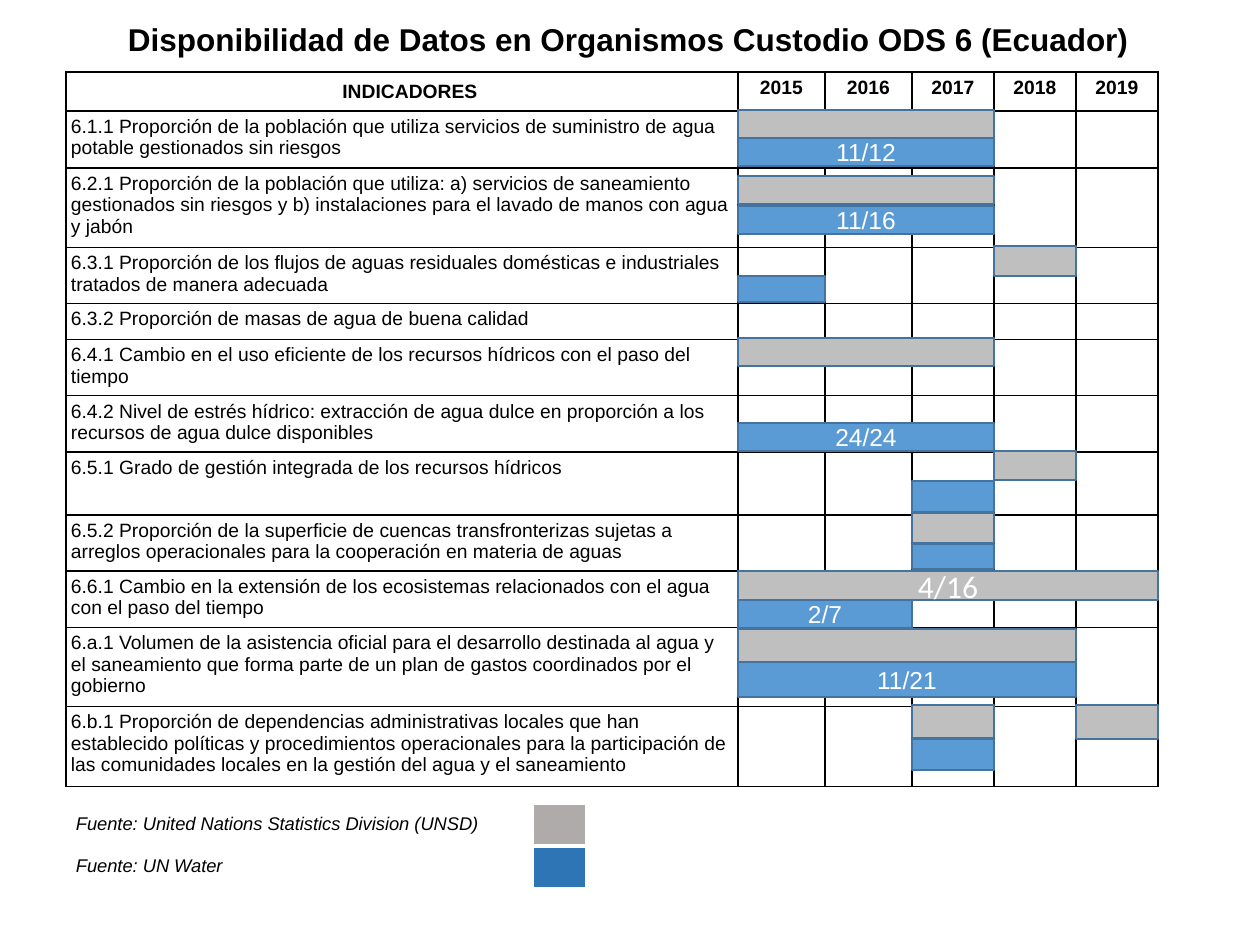
from itertools import accumulate
from lxml.etree import SubElement
from pptx import Presentation
from pptx.dml.color import RGBColor
from pptx.enum.shapes import MSO_SHAPE
from pptx.enum.text import MSO_ANCHOR, PP_ALIGN
from pptx.oxml.ns import qn
from pptx.util import Emu, Pt

BLACK = RGBColor(0x00, 0x00, 0x00)
WHITE = RGBColor(0xFF, 0xFF, 0xFF)
GRAY = RGBColor(0xBF, 0xBF, 0xBF)
BLUE = RGBColor(0x5B, 0x9B, 0xD5)
EDGE = RGBColor(0x43, 0x73, 0x9E)
KEY_GRAY = RGBColor(0xAF, 0xAB, 0xAB)
KEY_BLUE = RGBColor(0x2E, 0x75, 0xB6)

TITLE = "Disponibilidad de Datos en Organismos Custodio ODS 6 (Ecuador)"
HEADS = ["INDICADORES", "2015", "2016", "2017", "2018", "2019"]
COLS = [672, 87, 87, 82, 82, 82]
HEAD_H = 39

# Indicator, row height
GOALS = [
    ("6.1.1 Proporción de la población que utiliza servicios de suministro de agua "
     "potable gestionados sin riesgos", 57),
    ("6.2.1 Proporción de la población que utiliza: a) servicios de saneamiento "
     "gestionados sin riesgos y b) instalaciones para el lavado de manos con agua "
     "y jabón", 79),
    ("6.3.1 Proporción de los flujos de aguas residuales domésticas e industriales "
     "tratados de manera adecuada", 56),
    ("6.3.2 Proporción de masas de agua de buena calidad", 36),
    ("6.4.1 Cambio en el uso eficiente de los recursos hídricos con el paso del "
     "tiempo", 56),
    ("6.4.2 Nivel de estrés hídrico: extracción de agua dulce en proporción a los "
     "recursos de agua dulce disponibles", 56),
    ("6.5.1 Grado de gestión integrada de los recursos hídricos", 63),
    ("6.5.2 Proporción de la superficie de cuencas transfronterizas sujetas a "
     "arreglos operacionales para la cooperación en materia de aguas", 56),
    ("6.6.1 Cambio en la extensión de los ecosistemas relacionados con el agua "
     "con el paso del tiempo", 56),
    ("6.a.1 Volumen de la asistencia oficial para el desarrollo destinada al agua y "
     "el saneamiento que forma parte de un plan de gastos coordinados por el "
     "gobierno", 79),
    ("6.b.1 Proporción de dependencias administrativas locales que han "
     "establecido políticas y procedimientos operacionales para la participación de "
     "las comunidades locales en la gestión del agua y el saneamiento", 80),
]

# Row, drop from row top, height, first year, last year, fill, label
BARS = [
    (1, -1, 28, 2015, 2017, GRAY, ""),
    (1, 27, 28, 2015, 2017, BLUE, "11/12"),
    (2, 8, 28, 2015, 2017, GRAY, ""),
    (2, 38, 28, 2015, 2017, BLUE, "11/16"),
    (3, -1, 30, 2018, 2018, GRAY, ""),
    (3, 29, 26, 2015, 2015, BLUE, ""),
    (5, -1, 28, 2015, 2017, GRAY, ""),
    (6, 28, 28, 2015, 2017, BLUE, "24/24"),
    (7, 0, 29, 2018, 2018, GRAY, ""),
    (7, 30, 31, 2017, 2017, BLUE, ""),
    (8, -1, 30, 2017, 2017, GRAY, ""),
    (8, 30, 25, 2017, 2017, BLUE, ""),
    (9, 1, 29, 2015, 2019, GRAY, "4/16"),
    (9, 30, 28, 2015, 2016, BLUE, "2/7"),
    (10, 3, 33, 2015, 2018, GRAY, ""),
    (10, 36, 35, 2015, 2018, BLUE, "11/21"),
    (11, 0, 33, 2017, 2017, GRAY, ""),
    (11, 0, 34, 2019, 2019, GRAY, ""),
    (11, 34, 31, 2017, 2017, BLUE, ""),
]
KEYS = [
    ("Fuente: United Nations Statistics Division (UNSD)", KEY_GRAY, 3),
    ("Fuente: UN Water", KEY_BLUE, 1),
]


def px(n):
    return Emu(round(n * 914400 / 126))


def write(frame, text, size, color, align=PP_ALIGN.LEFT, name="Arial", **look):
    para = frame.paragraphs[0]
    para.alignment = align
    run = para.add_run()
    run.text = text
    run.font.color.rgb = color
    for key, val in {"size": Pt(size), "name": name, **look}.items():
        setattr(run.font, key, val)
    return para


def border(cell, color, width, base=None):
    """Line all four sides; base is the width of the bottom one."""
    props = cell._tc.get_or_add_tcPr()
    for spot, side in enumerate(("lnL", "lnR", "lnT", "lnB")):
        wide = base if base and side == "lnB" else width
        line = props.makeelement(qn("a:" + side), {"w": str(Pt(wide))})
        fill = SubElement(line, qn("a:solidFill"))
        SubElement(fill, qn("a:srgbClr"), val=str(color))
        props.insert(spot, line)


def grid(slide, left, top, cols, rows, inset):
    """Add a bare table with the given column widths and row heights."""
    frame = slide.shapes.add_table(len(rows), len(cols), px(left), px(top),
                                   px(sum(cols)), px(sum(rows)))
    table = frame.table
    table.first_row = table.horz_banding = False
    for col, wide in zip(table.columns, cols):
        col.width = px(wide)
    for row, high in zip(table.rows, rows):
        row.height = px(high)
    for cell in table.iter_cells():
        cell.fill.background()
        for side in ("left", "right", "top", "bottom"):
            setattr(cell, "margin_" + side, px(inset))
        end = cell.text_frame.paragraphs[0]._p.get_or_add_endParaRPr()
        end.set("sz", "1050")
    return table


def title(slide, left, top, wide, high):
    frame = slide.shapes.add_textbox(px(left), px(top), px(wide), px(high)).text_frame
    frame.word_wrap = True
    write(frame, TITLE, 18, BLACK, PP_ALIGN.CENTER, bold=True)


def goals(slide, left, top):
    rows = [HEAD_H] + [high for _, high in GOALS]
    table = grid(slide, left, top, COLS, rows, 5)
    for cell in table.iter_cells():
        border(cell, BLACK, 1)
    paras = [write(table.cell(0, c).text_frame, head, 11, BLACK,
                   PP_ALIGN.CENTER, bold=True) for c, head in enumerate(HEADS)]
    table.cell(0, 0).vertical_anchor = MSO_ANCHOR.MIDDLE
    paras[0]._p.get_or_add_pPr().set("indent", str(px(16)))
    paras += [write(table.cell(r, 0).text_frame, text, 11, BLACK, bold=False)
              for r, (text, _) in enumerate(GOALS, 1)]
    for para in paras:
        para.space_before = para.space_after = Pt(6)
    bars(slide, left, top, rows)


def bars(slide, left, top, rows):
    group = slide.shapes.add_group_shape()
    edges = list(accumulate(COLS, initial=left))
    tops = list(accumulate(rows, initial=top))
    for row, drop, high, start, stop, color, text in BARS:
        x, end = edges[start - 2014], edges[stop - 2013]
        bar = group.shapes.add_shape(MSO_SHAPE.RECTANGLE, px(x), px(tops[row] + drop),
                                     px(end - x), px(high))
        bar.shadow.inherit = False
        bar.fill.solid()
        bar.fill.fore_color.rgb = color
        bar.line.color.rgb = EDGE
        bar.line.width = Pt(1)
        if text:
            size, name = (18, "Calibri") if color == GRAY else (14, "Arial")
            bar.text_frame.vertical_anchor = MSO_ANCHOR.MIDDLE
            write(bar.text_frame, text, size, WHITE, PP_ALIGN.CENTER, name)


def legend(slide, left, top):
    table = grid(slide, left, top, [467, 53], [42, 42], 10)
    for r, (text, color, base) in enumerate(KEYS):
        write(table.cell(r, 0).text_frame, text, 10.5, BLACK, italic=True)
        swatch = table.cell(r, 1)
        swatch.fill.solid()
        swatch.fill.fore_color.rgb = color
        for c in range(2):
            border(table.cell(r, c), WHITE, 1, base)


def main():
    deck = Presentation()
    deck.slide_width, deck.slide_height = px(1260), px(945)
    slide = deck.slides.add_slide(deck.slide_layouts[6])
    title(slide, 66, 14, 1125, 50)
    legend(slide, 66, 804)
    goals(slide, 66, 72)
    deck.save("out.pptx")


if __name__ == "__main__":
    main()
